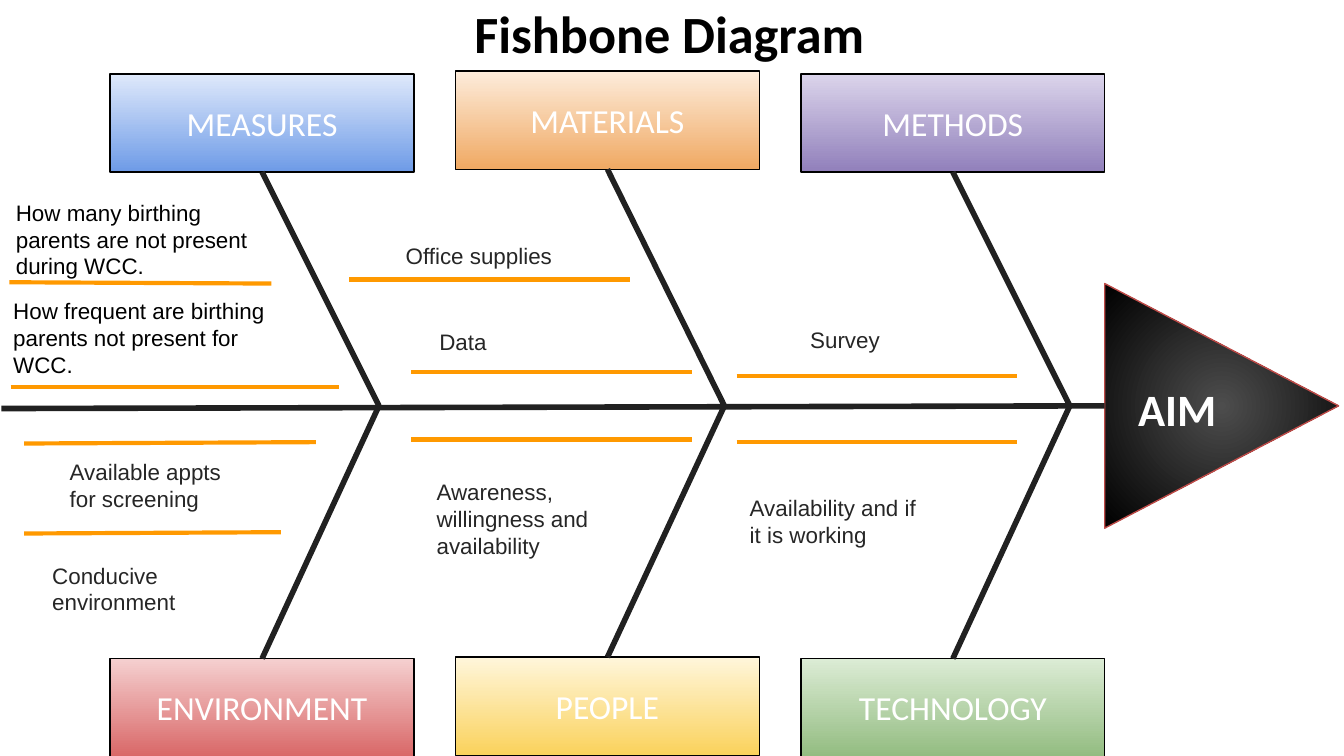
import pptx
import pptx.util
import pptx.dml.color
import pptx.enum.shapes
import pptx.enum.text
import pptx.oxml
import pptx.oxml.ns
from dataclasses import dataclass

# The slide is a grid of square cells: 100 columns by 56.25 rows.
CELL = pptx.util.Inches(0.1)
COLS, ROWS = 100, 56.25
SPINE = 30.2            # row of the spine
PITCH = 25.7            # columns from one box to the next
LEAN = 8.7              # columns a bone leans towards the head
BOX = (22.6, 7.3)


@dataclass(frozen=True)
class Theme:
    head: str = "Calibri"
    body: str = "Arial"
    black: str = "000000"
    white: str = "FFFFFF"
    bone: str = "212121"
    note: str = "262626"
    twig: str = "FF9900"
    rim: str = "BE4B48"
    glow: str = "4D4D4D"
    title: int = 28
    aim: int = 24
    label: int = 18
    text: int = 12
    thick: float = 3
    mid: float = 2.25
    thin: float = 0.75


THEME = Theme()

# Name, top colour, bottom colour, first row
TOP = [
    ("MEASURES", "DFE9FB", "6E9BE7", 5.5),
    ("MATERIALS", "FDECDB", "F0A963", 5.3),
    ("METHODS", "DBD4EB", "9180BB", 5.5),
]
BASE = [
    ("ENVIRONMENT", "F5D0D0", "D96868", 49),
    ("PEOPLE", "FFF6DB", "FAD25C", 48.9),
    ("TECHNOLOGY", "DCECD5", "93BC81", 49),
]

# Start column and row, end column and row
TWIGS = [
    (0.7, 21, 20.2, 21.1), (0.8, 28.8, 25.2, 28.8),
    (26, 20.8, 46.9, 20.8), (30.6, 27.7, 51.5, 27.7),
    (54.8, 28, 75.7, 28),
    (1.8, 33, 23.5, 32.9), (1.8, 39.7, 20.9, 39.6),
    (30.6, 32.7, 51.5, 32.7), (54.8, 32.9, 75.7, 32.9),
]

# Words, column, row, width, colour
NOTES = [
    ("How many birthing parents are not present during WCC.",
     0.2, 14.3, 20, THEME.black),
    ("How frequent are birthing parents not present for WCC.",
     0, 21.6, 23.5, THEME.black),
    ("Office supplies", 29.2, 17.5, 15.1, THEME.note),
    ("Data", 31.7, 23.9, 15.1, THEME.note),
    ("Survey", 59.3, 23.8, 15.1, THEME.note),
    ("Available appts for screening", 4.2, 33.6, 15.1, THEME.note),
    ("Conducive environment", 2.9, 41.3, 15.1, THEME.note),
    ("Awareness, willingness and availability",
     31.5, 35.1, 15.1, THEME.note),
    ("Availability and if it is working", 54.8, 36.3, 15.1, THEME.note),
]


def grid(*cells):
    return [round(n * CELL) for n in cells]


def rgb(code):
    return pptx.dml.color.RGBColor.from_string(code)


def write(shape, words, font, size, color, bold=False, align="LEFT"):
    frame = shape.text_frame
    frame.text = words
    frame.word_wrap = True
    frame.auto_size = pptx.enum.text.MSO_AUTO_SIZE.NONE
    para = frame.paragraphs[0]
    para.alignment = getattr(pptx.enum.text.PP_ALIGN, align)
    face = para.runs[0].font
    face.name, face.size, face.bold = font, pptx.util.Pt(size), bold
    face.color.rgb = rgb(color)


def paint(shape, start, end, rim):
    """Fill from start at the top to end at the bottom, with a thin rim."""
    shape.shadow.inherit = False
    shape.fill.gradient()
    shape.fill.gradient_angle = 270
    for stop, code, spot in zip(shape.fill.gradient_stops, (start, end), (0, 1)):
        stop.color.rgb = rgb(code)
        stop.position = spot
    shape.line.color.rgb = rgb(rim)
    shape.line.width = pptx.util.Pt(THEME.thin)


def add_line(slide, ends, color, width):
    kind = pptx.enum.shapes.MSO_CONNECTOR.STRAIGHT
    line = slide.shapes.add_connector(kind, *grid(*ends))
    line.line.color.rgb = rgb(color)
    line.line.width = pptx.util.Pt(width)
    props = line._element.spPr
    props.append(pptx.oxml.parse_xml(
        f'<a:effectLst {pptx.oxml.ns.nsdecls("a")}/>'))
    return line


def add_box(slide, col, name, start, end, row):
    kind = pptx.enum.shapes.MSO_SHAPE.RECTANGLE
    box = slide.shapes.add_shape(kind, *grid(8.2 + col * PITCH, row, *BOX))
    paint(box, start, end, THEME.black)
    write(box, name, THEME.head, THEME.label, THEME.white, align="CENTER")
    frame = box.text_frame
    frame.margin_left = frame.margin_right = 0
    frame.margin_top = frame.margin_bottom = 0
    frame.vertical_anchor = pptx.enum.text.MSO_ANCHOR.MIDDLE
    return box


def add_rib(slide, col, item, side):
    """Add a box and the bone from its given side to the spine."""
    box = add_box(slide, col, *item)
    mid = 8.2 + col * PITCH + BOX[0] / 2
    edge = item[-1] + (BOX[1] if side == 2 else 0)
    bone = add_line(slide, (mid, edge, mid + LEAN, SPINE),
                    THEME.bone, THEME.thick)
    bone.begin_connect(box, side)


def add_head(slide):
    kind = pptx.enum.shapes.MSO_SHAPE.ISOSCELES_TRIANGLE
    head = slide.shapes.add_shape(kind, *grid(81.8, 21.5, 18.2, 17.4))
    head.rotation = 90
    paint(head, THEME.glow, THEME.black, THEME.rim)
    line = head._element.spPr.find(".//" + pptx.oxml.ns.qn("a:lin"))
    glow = pptx.oxml.parse_xml(
        f'<a:path {pptx.oxml.ns.nsdecls("a")} path="circle">'
        '<a:fillToRect l="50000" t="50000" r="50000" b="50000"/></a:path>')
    line.getparent().replace(line, glow)


def add_text(slide, place, words, *style):
    write(slide.shapes.add_textbox(*grid(*place)), words, *style)


def add_title(slide, words):
    title = slide.shapes.title
    title.left, title.top, title.width, title.height = grid(
        34.3, -0.2, 31.5, 5.3)
    write(title, words, THEME.head, THEME.title, THEME.black, True)
    title.text_frame.vertical_anchor = pptx.enum.text.MSO_ANCHOR.MIDDLE


def main():
    deck = pptx.Presentation()
    deck.slide_width, deck.slide_height = grid(COLS, ROWS)
    slide = deck.slides.add_slide(deck.slide_layouts.get_by_name("Title Only"))
    add_title(slide, "Fishbone Diagram")
    add_head(slide)
    add_line(slide, (82.2, SPINE, 0.1, 30.4), THEME.bone, THEME.thick)
    for items, side in ((TOP, 2), (BASE, 0)):
        for col, item in enumerate(items):
            add_rib(slide, col, item, side)
    for ends in TWIGS:
        add_line(slide, ends, THEME.twig, THEME.mid)
    for words, col, row, wide, color in NOTES:
        add_text(slide, (col, row, wide, 5.2), words,
                 THEME.body, THEME.text, color)
    add_text(slide, (83.7, 27.9, 14.4, 4.6), "AIM",
             THEME.head, THEME.aim, THEME.white, True)
    deck.save("out.pptx")


if __name__ == "__main__":
    main()
